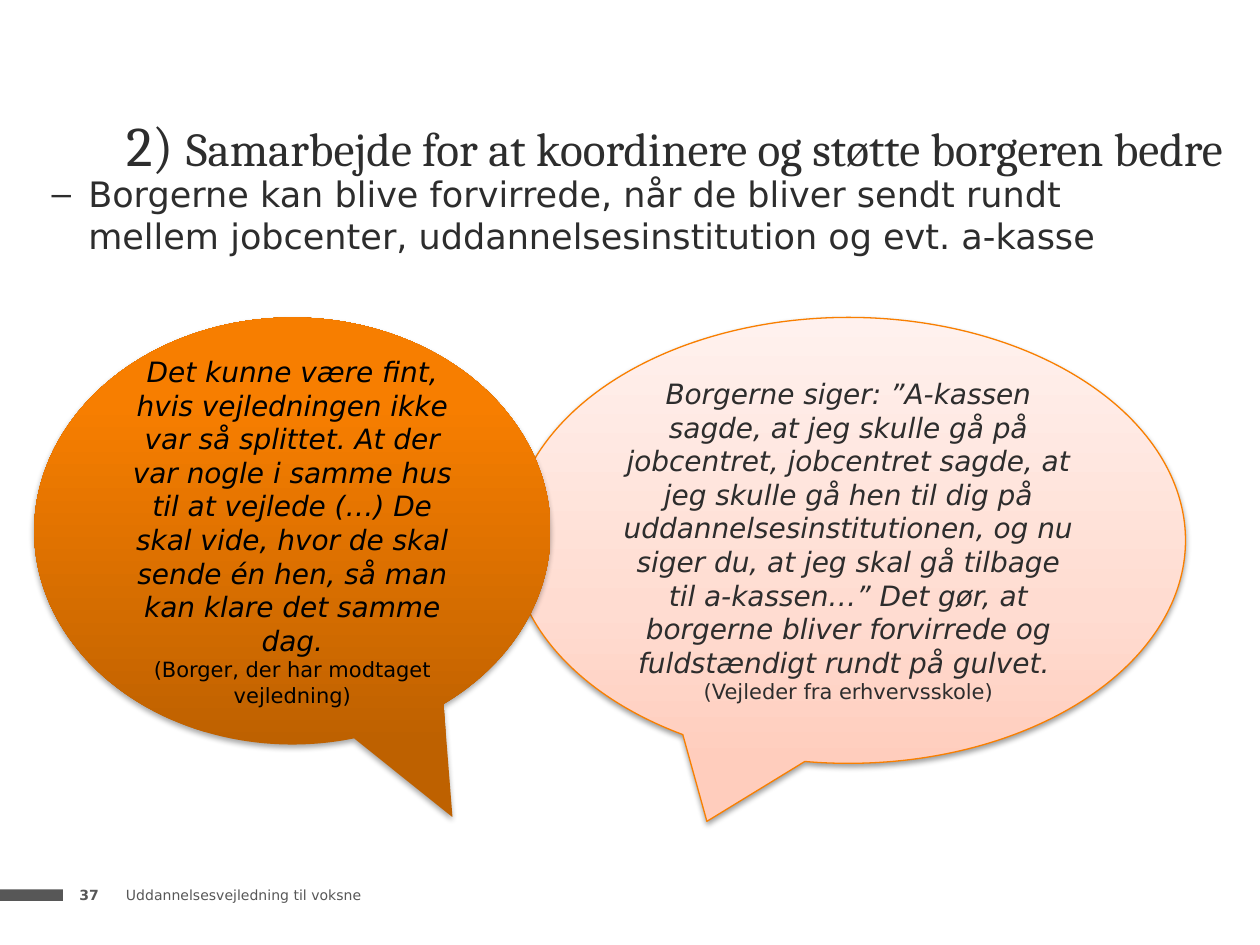
"""Build a slide with a heading, one bullet and two quotation callouts."""
from dataclasses import dataclass

from lxml import etree
from pptx import Presentation
from pptx.dml.color import RGBColor
from pptx.enum.shapes import MSO_SHAPE
from pptx.enum.text import MSO_ANCHOR, MSO_AUTO_SIZE, PP_ALIGN
from pptx.oxml.ns import qn
from pptx.util import Cm, Pt

RECT, CALLOUT = MSO_SHAPE.RECTANGLE, MSO_SHAPE.OVAL_CALLOUT
TOP, MIDDLE, BOTTOM = MSO_ANCHOR.TOP, MSO_ANCHOR.MIDDLE, MSO_ANCHOR.BOTTOM
LEFT, CENTER = PP_ALIGN.LEFT, PP_ALIGN.CENTER
NO_FIT = MSO_AUTO_SIZE.NONE
SERIF, SANS = "Cambria", "DejaVu Sans"
DARK, GREY, ORANGE, BLACK = "2D2D2D", "575757", "F97F00", "000000"

Box = tuple[float, float, float, float]


@dataclass
class Quote:
    box: Box
    tip: tuple[float, float]
    stops: list[tuple[int, str]]
    line: str | None
    shadow: tuple[int, float]
    color: str
    text: str
    source: str


@dataclass
class Label:
    box: Box
    text: str
    bold: bool


QUOTES = [
    Quote((10.31, 6.4, 13.59, 8.99), (-0.21, 0.63),
          [(0, "FFCDBD"), (35, "FFDCD1"), (100, "FFF1EE")], ORANGE, (38, 1.6), DARK,
          "Borgerne siger: ”A-kassen sagde, at jeg skulle gå på jobcentret, "
          "jobcentret sagde, at jeg skulle gå hen til dig på "
          "uddannelsesinstitutionen, og nu siger du, at jeg skal gå tilbage til "
          "a-kassen…” Det gør, at borgerne bliver forvirrede og fuldstændigt "
          "rundt på gulvet. ",
          "(Vejleder fra erhvervsskole)"),
    Quote((0.69, 6.4, 10.41, 8.61), (0.31, 0.67),
          [(0, "BE6100"), (80, "F77E00"), (100, "F87F00")], None, (35, 1.8), BLACK,
          "Det kunne være fint, hvis vejledningen ikke var så splittet. At der "
          "var nogle i samme hus til at vejlede (…) De skal vide, hvor de skal "
          "sende én hen, så man kan klare det samme dag.",
          "(Borger, der har modtaget vejledning)"),
]
LABELS = [
    Label((2.54, 17.83, 15.01, 0.41), "Uddannelsesvejledning til voksne", False),
    Label((1.6, 17.83, 0.94, 0.41), "37", True),
]


def rgb(color: str) -> RGBColor:
    return RGBColor.from_string(color)


def place(sp, box: Box) -> None:
    sp.left, sp.top, sp.width, sp.height = map(Cm, box)


def frame(sp, anchor, inset: bool = False):
    tf = sp.text_frame
    tf.word_wrap, tf.auto_size, tf.vertical_anchor = True, NO_FIT, anchor
    if not inset:
        tf.margin_left = tf.margin_top = tf.margin_right = tf.margin_bottom = 0
    return tf


def add_run(p, text: str, size: int, color: str, font: str = SANS,
            bold: bool = False, italic: bool = False) -> None:
    r = p.add_run()
    r.text = text
    f = r.font
    f.name, f.size, f.bold, f.italic = font, Pt(size), bold, italic
    f.color.rgb = rgb(color)


def add_color(parent, color: str):
    return etree.SubElement(parent, qn("a:srgbClr"), val=color)


def add_bullet(p, char: str, color: str, indent: int) -> None:
    pPr = p._p.get_or_add_pPr()
    pPr.set("marL", str(indent))
    pPr.set("indent", str(-indent))
    add_color(etree.SubElement(pPr, qn("a:buClr")), color)
    etree.SubElement(pPr, qn("a:buChar"), char=char)


def fill_gradient(sp, stops: list[tuple[int, str]]) -> None:
    sp.fill.gradient()
    sp.fill.gradient_angle = 90
    gs_list = sp._element.spPr.find(".//" + qn("a:gsLst"))
    for gs in list(gs_list):
        gs_list.remove(gs)
    for pos, color in stops:
        add_color(etree.SubElement(gs_list, qn("a:gs"), pos=str(pos * 1000)), color)


def add_shadow(sp, alpha: int, dist: float) -> None:
    sp.shadow.inherit = False
    effects = sp._element.spPr.find(qn("a:effectLst"))
    shadow = etree.SubElement(effects, qn("a:outerShdw"), blurRad=str(Pt(3.1)),
                              dist=str(Pt(dist)), dir="5400000", rotWithShape="0")
    etree.SubElement(add_color(shadow, BLACK), qn("a:alpha"), val=str(alpha * 1000))


def add_quote(s, q: Quote) -> None:
    sp = s.shapes.add_shape(CALLOUT, *map(Cm, q.box))
    sp.adjustments[0], sp.adjustments[1] = q.tip
    fill_gradient(sp, q.stops)
    if q.line:
        sp.line.color.rgb = rgb(q.line)
        sp.line.width = Pt(0.75)
    else:
        sp.line.fill.background()
    add_shadow(sp, *q.shadow)
    tf = frame(sp, MIDDLE, inset=True)
    p = tf.paragraphs[0]
    p.alignment = CENTER
    add_run(p, q.text, 16, q.color, italic=True)
    p = tf.add_paragraph()
    p.alignment = CENTER
    add_run(p, q.source, 12, q.color)


def add_label(s, label: Label) -> None:
    sp = s.shapes.add_textbox(*map(Cm, label.box))
    p = frame(sp, MIDDLE).paragraphs[0]
    add_run(p, label.text, 8, GREY, bold=label.bold)


def add_bar(s, box: Box) -> None:
    sp = s.shapes.add_shape(RECT, *map(Cm, box))
    sp.shadow.inherit = False
    sp.fill.solid()
    sp.fill.fore_color.rgb = rgb(GREY)
    sp.line.fill.background()


def fill_title(sp) -> None:
    place(sp, (2.54, 1.07, 22.23, 2.51))
    p = frame(sp, BOTTOM).paragraphs[0]
    p.alignment = LEFT
    add_run(p, "2) ", 32, DARK, SERIF)
    add_run(p, "Samarbejde for at koordinere og støtte borgeren bedre", 27, DARK, SERIF)


def fill_body(sp) -> None:
    place(sp, (1.04, 3.48, 22.86, 13.72))
    p = frame(sp, TOP).paragraphs[0]
    add_bullet(p, "–", DARK, Cm(0.74))
    p.space_before, p.space_after = Pt(0), Pt(10)
    add_run(p, "Borgerne kan blive forvirrede, når de bliver sendt rundt mellem "
            "jobcenter, uddannelsesinstitution og evt. a-kasse", 20, DARK)


def main() -> None:
    prs = Presentation()
    prs.slide_width, prs.slide_height = Cm(25.4), Cm(19.05)
    s = prs.slides.add_slide(prs.slide_layouts[1])
    add_bar(s, (0, 17.93, 1.27, 0.23))
    fill_title(s.shapes.title)
    fill_body(s.placeholders[1])
    for quote in QUOTES:
        add_quote(s, quote)
    for label in LABELS:
        add_label(s, label)
    prs.save("out.pptx")


if __name__ == "__main__":
    main()
